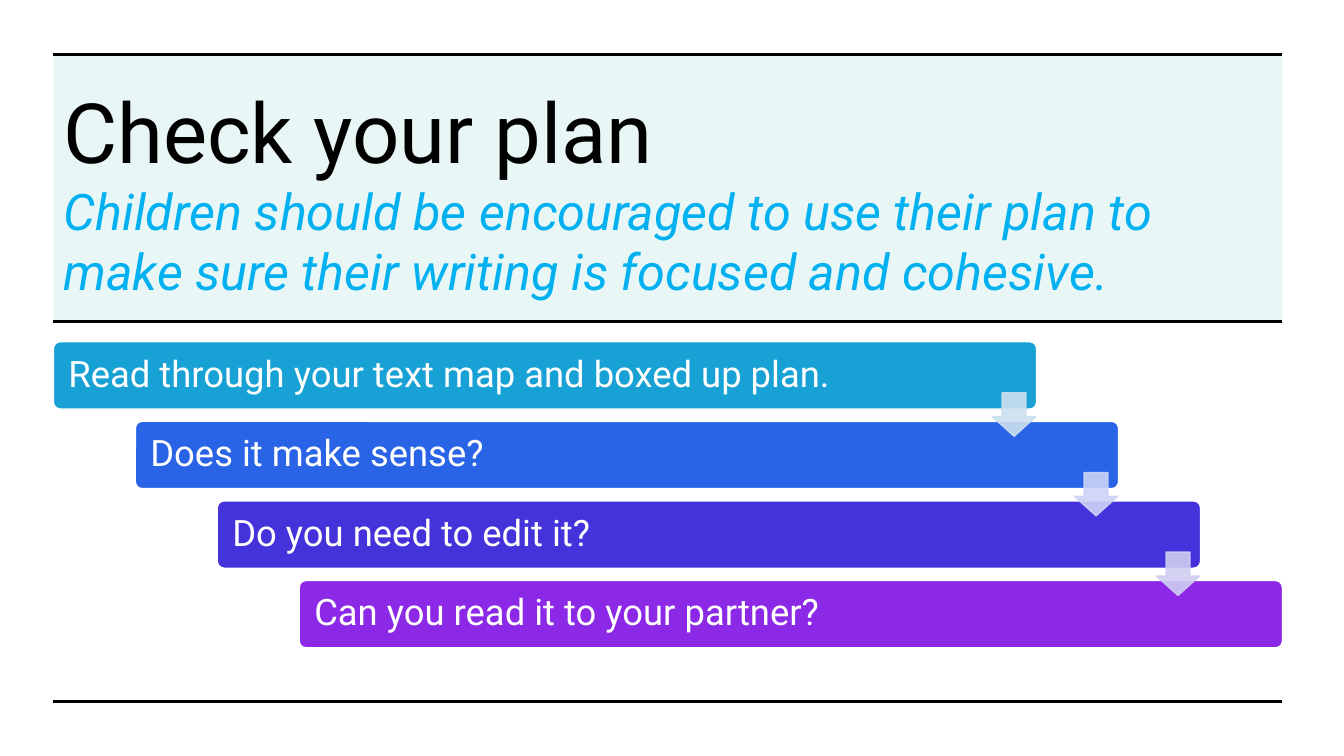
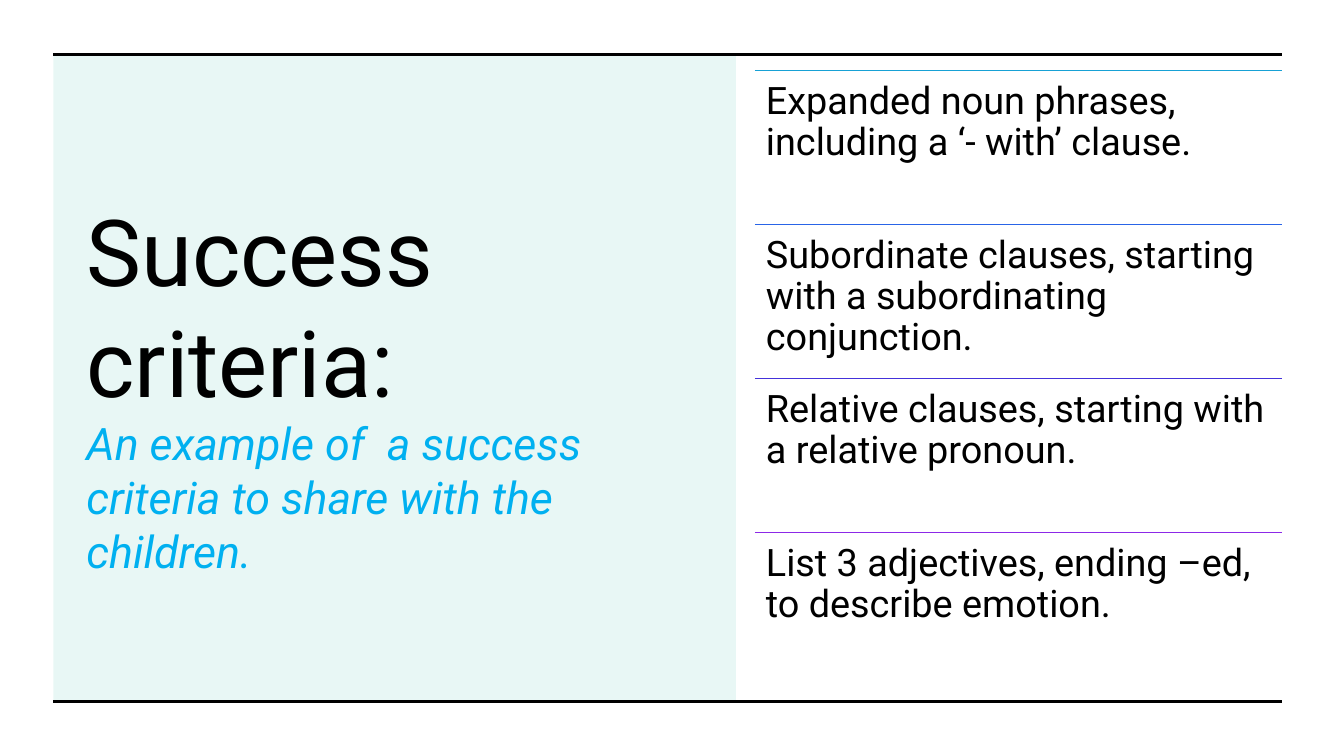
import pptx
import pptx.util
import pptx.dml.color
import pptx.enum.shapes
import pptx.enum.text
import pptx.oxml.ns
import lxml.etree

SHAPE = pptx.enum.shapes.MSO_SHAPE
ANCHOR = pptx.enum.text.MSO_ANCHOR
WIDE, HIGH = 13.33, 7.5

# Content grid: 15 columns by 10 rows between the outer rules
LEFT, TOP = 0.53, 0.54
COLS, ROWS = 15, 10
COL = (WIDE - LEFT - 0.61) / COLS
ROW = (HIGH - 2 * TOP) / ROWS

FONT = "Roboto"
BLACK, WHITE, SKY, MINT = "000000", "FFFFFF", "00B0F0", "20B59F"
HUES = ["17A1D5", "2964E7", "4432DA", "8C29E7"]
TINTS = ["CCE0EF", "CDD3F6", "CFCEF1"]

STEPS = [
    "Read through your text map and boxed up plan.",
    "Does it make sense?",
    "Do you need to edit it?",
    "Can you read it to your partner?",
]
GOALS = [
    "Expanded noun phrases, including a ‘- with’ clause.",
    "Subordinate clauses, starting with a subordinating conjunction.",
    "Relative clauses, starting with a relative pronoun.",
    "List 3 adjectives, ending –ed, to describe emotion.",
]


def across(col):
    return pptx.util.Inches(LEFT + col * COL)


def down(row):
    return pptx.util.Inches(TOP + row * ROW)


def area(col, row, cols, rows):
    """Turn a grid area into left, top, width and height."""
    left, top = across(col), down(row)
    return left, top, across(col + cols) - left, down(row + rows) - top


def color(hue):
    return pptx.dml.color.RGBColor.from_string(hue)


def paint(fill, hue):
    fill.solid()
    fill.fore_color.rgb = color(hue)


def fade(shape, share):
    """Make the shape's fill and line opaque to the given share."""
    for node in shape.element.iter(pptx.oxml.ns.qn("a:srgbClr")):
        alpha = lxml.etree.SubElement(node, pptx.oxml.ns.qn("a:alpha"))
        alpha.set("val", str(int(share * 100000)))


def add_run(para, text, size, hue, slant=False):
    run = para.add_run()
    run.text = text
    font = run.font
    font.name, font.size, font.italic = FONT, pptx.util.Pt(size), slant
    font.color.rgb = color(hue)


def write(shape, text, size, hue, anchor, side, edge):
    frame = shape.text_frame
    frame.word_wrap = True
    frame.vertical_anchor = anchor
    frame.margin_left = frame.margin_right = pptx.util.Inches(side)
    frame.margin_top = frame.margin_bottom = pptx.util.Inches(edge)
    para = frame.paragraphs[0]
    para.alignment = pptx.enum.text.PP_ALIGN.LEFT
    para.line_spacing = 0.9
    add_run(para, text, size, hue)


def add_form(slide, kind, place, hue, edge=None):
    form = slide.shapes.add_shape(kind, *area(*place))
    form.shadow.inherit = False
    paint(form.fill, hue)
    if edge:
        paint(form.line.fill, edge)
        form.line.width = pptx.util.Pt(1)
    else:
        form.line.fill.background()
    return form


def add_rule(slide, col, row, hue=BLACK, width=2.25):
    """Draw a level line from a column to the right edge of the grid."""
    rule = slide.shapes.add_connector(
        pptx.enum.shapes.MSO_CONNECTOR.STRAIGHT,
        across(col), down(row), across(COLS), down(row))
    paint(rule.line.fill, hue)
    rule.line.width = pptx.util.Pt(width)
    lxml.etree.SubElement(rule.element.spPr, pptx.oxml.ns.qn("a:effectLst"))


def set_title(slide, place, head, size, note, small):
    title = slide.shapes.title
    title.left, title.top, title.width, title.height = area(*place)
    frame = title.text_frame
    frame.word_wrap = True
    frame.auto_size = pptx.enum.text.MSO_AUTO_SIZE.NONE
    frame.vertical_anchor = ANCHOR.MIDDLE
    para = frame.paragraphs[0]
    para.alignment = pptx.enum.text.PP_ALIGN.LEFT
    add_run(para, head, size, BLACK)
    para.add_line_break()
    add_run(para, note, small, SKY, slant=True)
    # Bring the title in front of the panel
    slide.shapes.element.append(title.element)


def add_page(deck, cols, rows):
    """Add a slide with a pale title panel and the outer rules."""
    slide = deck.slides.add_slide(deck.slide_layouts[5])
    panel = add_form(slide, SHAPE.RECTANGLE, (0, 0, cols, rows), MINT)
    fade(panel, 0.1)
    for row in (0, ROWS):
        add_rule(slide, 0, row)
    return slide


def add_stairs(slide, row, pitch):
    """Step the bars right by one column each, then link them by arrows."""
    for i, (text, hue) in enumerate(zip(STEPS, HUES)):
        place = (i, row + i * pitch, 12, 1.04)
        bar = add_form(slide, SHAPE.ROUNDED_RECTANGLE, place, hue, WHITE)
        bar.adjustments[0] = 0.1
        write(bar, text, 26, WHITE, ANCHOR.MIDDLE, 0.13, 0.05)
    for i, tint in enumerate(TINTS):
        place = (i + 11.46, row + i * pitch + 0.79, 0.53, 0.67)
        arrow = add_form(slide, SHAPE.DOWN_ARROW, place, tint, tint)
        arrow.adjustments[0], arrow.adjustments[1] = 0.55, 0.45
        fade(arrow, 0.9)


def add_goals(slide, col, row, pitch):
    for i, (text, hue) in enumerate(zip(GOALS, HUES)):
        top = row + i * pitch
        add_rule(slide, col, top, hue, 1)
        box = slide.shapes.add_textbox(*area(col, top, COLS - col, pitch))
        write(box, text, 27, BLACK, ANCHOR.TOP, 0.11, 0.11)


def main():
    deck = pptx.Presentation()
    deck.slide_width = pptx.util.Inches(WIDE)
    deck.slide_height = pptx.util.Inches(HIGH)

    plan = add_page(deck, COLS, 4.13)
    add_rule(plan, 0, 4.13)
    set_title(plan, (0, 0.83, 13.94, 2.54), "Check your plan", 59.4,
              "Children should be encouraged to use their plan to make sure "
              "their writing is focused and cohesive.", 36)
    add_stairs(plan, 4.44, 1.23)

    goals = add_page(deck, 8.33, ROWS)
    set_title(goals, (0.28, 0.83, 7.53, 8.57), "Success criteria:", 66,
              "An example of  a success criteria to share with the children.",
              32)
    add_goals(goals, 8.56, 0.25, 2.38)

    deck.save("out.pptx")


if __name__ == "__main__":
    main()
